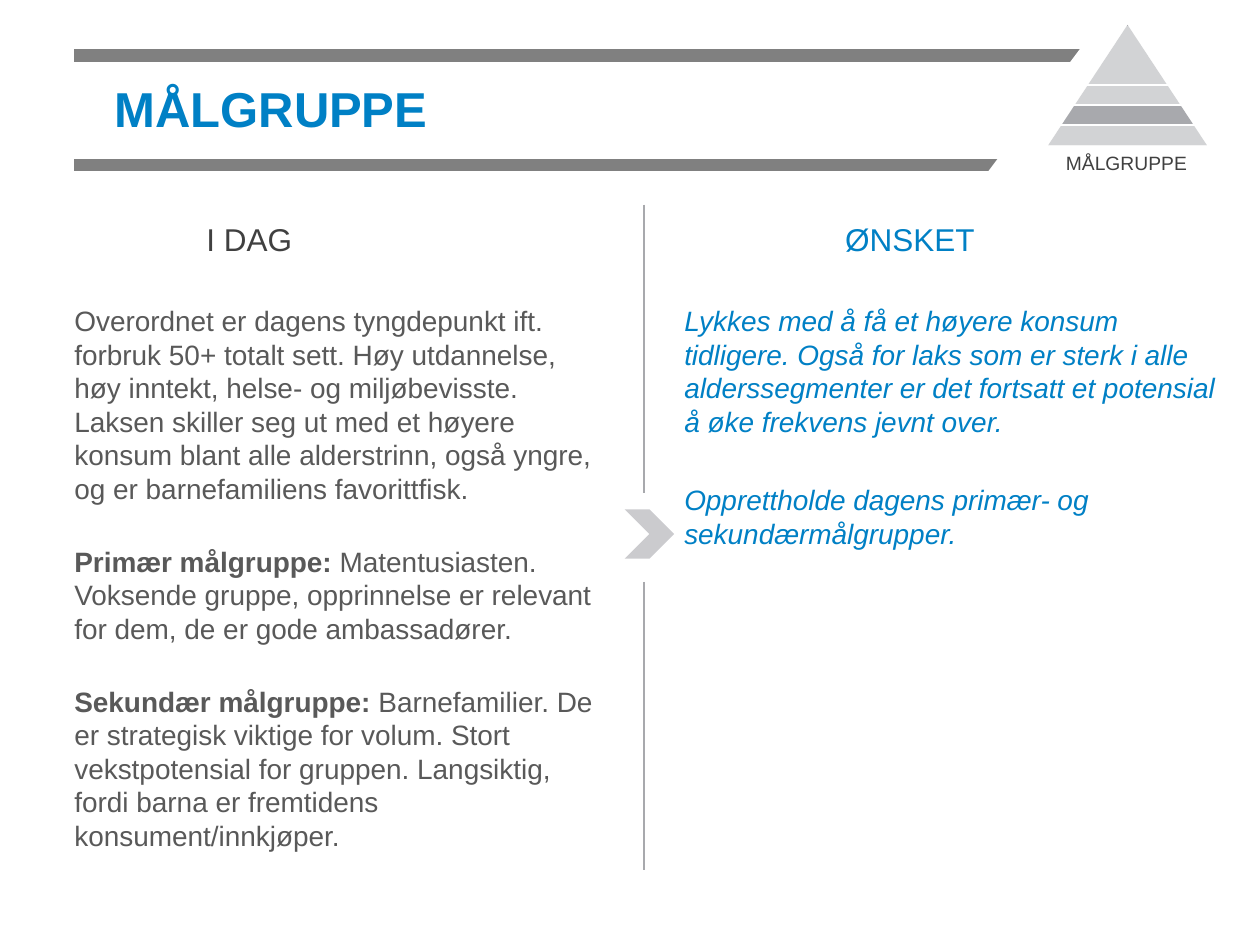
from dataclasses import dataclass
from typing import Optional

import pptx
import pptx.dml.color
import pptx.enum.shapes
import pptx.enum.text
import pptx.oxml
import pptx.oxml.ns
import pptx.util

Pt = pptx.util.Pt
Kind = pptx.enum.shapes.MSO_SHAPE
Align = pptx.enum.text.PP_ALIGN
Anchor = pptx.enum.text.MSO_ANCHOR


@dataclass(frozen=True)
class Theme:
    font: str = "Arial"
    blue: str = "0080C5"
    dark: str = "404040"
    body: str = "595959"
    bar: str = "808080"
    silver: str = "A8A9AD"
    chevron: str = "CBCBCE"
    white: str = "FFFFFF"
    title_size: float = 28
    heading_size: float = 18
    body_size: float = 16
    caption_size: float = 11
    line_pitch: float = 19.2
    para_gap: float = 22.4
    wide_gap: float = 25.6


THEME = Theme()


@dataclass(frozen=True)
class Frame:
    left: float
    top: float
    width: float
    height: float

    def lengths(self) -> list:
        return [Pt(value) for value in (self.left, self.top, self.width, self.height)]


@dataclass(frozen=True)
class Rule:
    x1: float
    y1: float
    x2: float
    y2: float
    color: str
    weight: float = 1


@dataclass(frozen=True)
class Figure:
    kind: Kind
    frame: Frame
    color: str
    adjustment: Optional[float] = None
    opacity: Optional[int] = None


@dataclass(frozen=True)
class Span:
    text: str
    bold: bool = False
    break_before: bool = False


@dataclass(frozen=True)
class TextBlock:
    frame: Frame
    paragraphs: list
    size: float
    color: str
    italic: bool = False
    align: Align = Align.LEFT
    inset: tuple = (0, 0)
    gap: float = 0
    pitch: Optional[float] = None


def rgb(color: str):
    return pptx.dml.color.RGBColor.from_string(color)


def apply(target, values: dict) -> None:
    for name, value in values.items():
        setattr(target, name, value)


def draw_rule(page, rule: Rule) -> None:
    line = page.shapes.add_connector(
        pptx.enum.shapes.MSO_CONNECTOR.STRAIGHT,
        Pt(rule.x1), Pt(rule.y1), Pt(rule.x2), Pt(rule.y2))
    line.line.color.rgb = rgb(rule.color)
    line.line.width = Pt(rule.weight)
    properties = line.element.find(pptx.oxml.ns.qn("p:spPr"))
    properties.append(pptx.oxml.parse_xml(
        f'<a:effectLst {pptx.oxml.ns.nsdecls("a")}/>'))


def draw_figure(page, figure: Figure) -> None:
    shape = page.shapes.add_shape(figure.kind, *figure.frame.lengths())
    shape.shadow.inherit = False
    shape.fill.solid()
    shape.fill.fore_color.rgb = rgb(figure.color)
    shape.line.fill.background()
    if figure.adjustment is not None:
        shape.adjustments[0] = figure.adjustment
    if figure.opacity is not None:
        color = shape.element.find(".//" + pptx.oxml.ns.qn("a:srgbClr"))
        color.append(pptx.oxml.parse_xml(
            f'<a:alpha {pptx.oxml.ns.nsdecls("a")} val="{figure.opacity * 1000}"/>'))


def fill_text(box, block: TextBlock, bold: bool = False, anchor: Anchor = Anchor.TOP) -> None:
    apply(box, dict(zip(("left", "top", "width", "height"), block.frame.lengths())))
    side, edge = (Pt(value) for value in block.inset)
    apply(box.text_frame, {
        "word_wrap": True, "auto_size": pptx.enum.text.MSO_AUTO_SIZE.NONE,
        "vertical_anchor": anchor, "margin_left": side, "margin_right": side,
        "margin_top": edge, "margin_bottom": edge})
    for index, spans in enumerate(block.paragraphs):
        para = box.text_frame.add_paragraph() if index else box.text_frame.paragraphs[0]
        apply(para, {"alignment": block.align, "space_before": Pt(block.gap if index else 0)})
        if block.pitch:
            para.line_spacing = Pt(block.pitch)
        for span in spans:
            if span.break_before:
                para.add_line_break()
            run = para.add_run()
            run.text = span.text
            apply(run.font, {"name": THEME.font, "size": Pt(block.size),
                             "bold": bold or span.bold, "italic": block.italic})
            run.font.color.rgb = rgb(block.color)


def draw_text(page, block: TextBlock) -> None:
    fill_text(page.shapes.add_textbox(*block.frame.lengths()), block)


HEADER = [Rule(42.5, y, 689, y, THEME.bar, 7) for y in (94.3, 31.7)]
DIVIDERS = [Rule(368, top, 368, top + 164.5, THEME.silver) for top in (117, 332.5)]
MASKS = [
    Figure(Kind.CHEVRON, Frame(357, 291, 28.2, 28.2), THEME.chevron),
    Figure(Kind.RECTANGLE, Frame(620.6, 20.9, 77, 81.4), THEME.white),
    Figure(Kind.TRAPEZOID, Frame(558.7, 9.4, 144.7, 96.5), THEME.white, 0.75),
]
PYRAMID = Figure(Kind.ISOSCELES_TRIANGLE, Frame(599, 14.2, 90.7, 68.8), THEME.silver)
PYRAMID_RULES = [Rule(599, y, 689.8, y, THEME.white) for y in (71.3, 60, 48.7)]
VEILS = [
    Figure(Kind.TRAPEZOID, Frame(589, 71.3, 106.6, 11.7), THEME.white, 0.03, 49),
    Figure(Kind.TRAPEZOID, Frame(599, 15, 85, 45.4), THEME.white, 0.66, 49),
]

TITLE = TextBlock(Frame(65.5, 31.7, 510.5, 59.8), [[Span("MÅLGRUPPE")]],
                  THEME.title_size, THEME.blue)
TEXTS = [
    TextBlock(Frame(110.9, 122.4, 226.8, 29), [[Span("I DAG")]],
              THEME.heading_size, THEME.dark, inset=(7.2, 3.6)),
    TextBlock(Frame(475.9, 122.4, 203.8, 29), [[Span("ØNSKET")]],
              THEME.heading_size, THEME.blue, inset=(7.2, 3.6)),
    TextBlock(Frame(42.5, 173.5, 306, 323.3), [
        [Span("Overordnet er dagens tyngdepunkt ift. forbruk 50+ totalt sett. Høy utdannelse, "
              "høy inntekt, helse- og miljøbevisste. Laksen skiller seg ut med et høyere konsum "
              "blant alle alderstrinn, også yngre, og er barnefamiliens favorittfisk.")],
        [Span("Primær målgruppe:", bold=True), Span(" Matentusiasten."),
         Span("Voksende gruppe, opprinnelse er relevant for dem, de er gode ambassadører.",
              break_before=True)],
        [Span("Sekundær målgruppe:", bold=True),
         Span(" Barnefamilier. De er strategisk viktige for volum. Stort vekstpotensial for "
              "gruppen. Langsiktig, fordi barna er fremtidens konsument/innkjøper.")],
    ], THEME.body_size, THEME.body, gap=THEME.para_gap, pitch=THEME.line_pitch),
    TextBlock(Frame(391, 173.5, 308.9, 323.3), [
        [Span("Lykkes med å få et høyere konsum tidligere. Også for laks som er sterk i alle "
              "alderssegmenter er det fortsatt et potensial å øke frekvens jevnt over.")],
        [Span("Opprettholde dagens primær- og sekundærmålgrupper.")],
    ], THEME.body_size, THEME.blue, italic=True, gap=THEME.wide_gap, pitch=THEME.line_pitch),
    TextBlock(Frame(567.4, 82.8, 152.6, 20.9), [[Span("MÅLGRUPPE")]],
              THEME.caption_size, THEME.dark, align=Align.CENTER, inset=(7.2, 3.6)),
]


def main() -> None:
    deck = pptx.Presentation()
    apply(deck, {"slide_width": Pt(720), "slide_height": Pt(540)})
    page = deck.slides.add_slide(deck.slide_layouts[5])
    fill_text(page.shapes.title, TITLE, bold=True, anchor=Anchor.MIDDLE)
    for rule in HEADER + DIVIDERS:
        draw_rule(page, rule)
    for figure in MASKS + [PYRAMID]:
        draw_figure(page, figure)
    for rule in PYRAMID_RULES:
        draw_rule(page, rule)
    for figure in VEILS:
        draw_figure(page, figure)
    for block in TEXTS:
        draw_text(page, block)
    deck.save("out.pptx")


if __name__ == "__main__":
    main()
